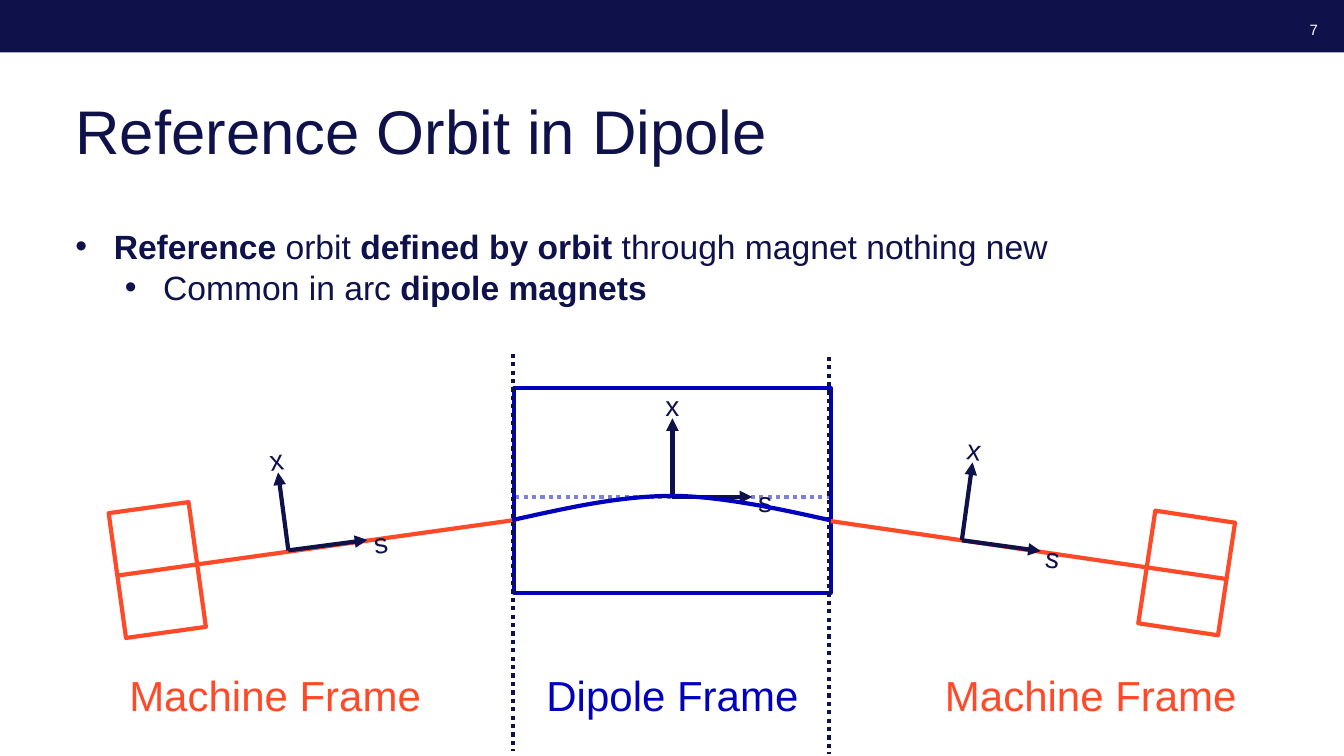
import math
import pptx
import pptx.util
import pptx.dml.color
import pptx.enum.dml
import pptx.enum.shapes
import pptx.enum.text
import pptx.oxml
import pptx.oxml.ns
from lxml import etree

Inches, Pt = pptx.util.Inches, pptx.util.Pt
ALIGN = pptx.enum.text.PP_ALIGN
ANCHOR = pptx.enum.text.MSO_ANCHOR
RECT = pptx.enum.shapes.MSO_SHAPE.RECTANGLE
NAVY, BLUE, RED, WHITE, PALE = "0F124A", "0000BD", "FF4A29", "FFFFFF", "7F7FDD"


def tint(code):
    return pptx.dml.color.RGBColor.from_string(code)


def apply(target, style):
    for key, value in style.items():
        setattr(target, key, value)


def turn(x, y, angle):
    a = math.radians(angle)
    return x * math.cos(a) - y * math.sin(a), x * math.sin(a) + y * math.cos(a)


def child(parent, tag, **attrs):
    return etree.SubElement(parent, pptx.oxml.ns.qn(tag), attrs)


def ink(line, color):
    line.color.rgb = tint(color)
    line.width = Pt(3)


def rule(shapes, start, end, color, dots=False, arrow=False):
    ends = [Inches(v) for v in (*start, *end)]
    line = shapes.add_connector(pptx.enum.shapes.MSO_CONNECTOR.STRAIGHT, *ends)
    ink(line.line, color)
    if dots:
        line.line.dash_style = pptx.enum.dml.MSO_LINE.ROUND_DOT
    if arrow:
        child(line.line._get_or_add_ln(), "a:tailEnd", type="triangle")
    child(line._element.spPr, "a:effectLst")
    return line


def block(shapes, box, fill=None, edge=None, angle=0):
    shape = shapes.add_shape(RECT, *[Inches(v) for v in box])
    shape.shadow.inherit = False
    shape.rotation = angle
    if fill:
        shape.fill.solid()
        shape.fill.fore_color.rgb = tint(fill)
    else:
        shape.fill.background()
    if edge:
        ink(shape.line, edge)
    else:
        shape.line.fill.background()
    return shape


def style(par, size, color, pitch, align):
    apply(par, {"line_spacing": Pt(pitch), "alignment": align})
    for run in par.runs:
        apply(run.font, {"name": "Arial", "size": Pt(size)})
        run.font.color.rgb = tint(color)


def label(shapes, box, text, size, color, pitch=37, align=ALIGN.CENTER,
          anchor=ANCHOR.TOP, angle=0):
    shape = shapes.add_textbox(*[Inches(v) for v in box])
    shape.rotation = angle
    apply(shape.text_frame, {"word_wrap": True, "vertical_anchor": anchor})
    par = shape.text_frame.paragraphs[0]
    par.add_run().text = text
    style(par, size, color, pitch, align)


def banner(slide, x, y, w, h):
    block(slide.shapes, (x, y, w, h), fill=NAVY)
    label(slide.shapes, (x + w - 0.58, y + 0.14, 0.42, 0.25), "7", 10.7, WHITE,
          16.5, ALIGN.RIGHT, ANCHOR.MIDDLE)


def bullets(slide, x, y, w, h):
    items = [
        (0.38, [("Reference", True), (" orbit ", False), ("defined by orbit ", True),
                ("through magnet nothing new", False)]),
        (0.87, [("Common in arc ", False), ("dipole magnets", True)]),
    ]
    frame = slide.shapes.add_textbox(*[Inches(v) for v in (x, y, w, h)]).text_frame
    frame.word_wrap = True
    for i, (left, runs) in enumerate(items):
        par = frame.add_paragraph() if i else frame.paragraphs[0]
        par.level = i
        for text, bold in runs:
            run = par.add_run()
            run.text = text
            run.font.bold = bold
        style(par, 24, NAVY, 29.3, ALIGN.LEFT)
        props = par._p.get_or_add_pPr()
        props.set("marL", str(Inches(left)))
        props.set("indent", str(Inches(-0.38)))
        child(props, "a:buFont", typeface="Arial")
        child(props, "a:buChar", char="•")


def axes(slide, x, y, angle):
    group = slide.shapes.add_group_shape().shapes
    parts = [("s", (0.79, 0), (1.02, -0.08), ALIGN.LEFT),
             ("x", (0, -0.78), (0, -1.04), ALIGN.CENTER)]
    for name, tip, spot, align in parts:
        dx, dy = turn(*tip, angle)
        rule(group, (x, y), (x + dx, y + dy), NAVY, arrow=True)
        dx, dy = turn(*spot, angle)
        box = (x + dx - 0.27, y + dy - 0.27, 0.54, 0.55)
        label(group, box, name, 20, NAVY, align=align, angle=angle)


def beam(slide, x, y, w, h, angle, gate, side):
    quad = block(slide.shapes, (x, y, w, h), edge=RED, angle=angle)
    dx, dy = turn(side * w / 2, 0, angle)
    far = (x + w / 2 + dx, y + h / 2 + dy)
    line = rule(slide.shapes, far, gate, RED)
    line.begin_connect(quad, 3 if side > 0 else 1)
    apply(line, {"begin_x": Inches(far[0]), "begin_y": Inches(far[1])})


def bezier(a, b, c, d, steps=24):
    for i in range(1, steps + 1):
        t = i / steps
        u = 1 - t
        yield tuple(u**3 * p + 3 * u * u * t * q + 3 * u * t * t * r + t**3 * s
                    for p, q, r, s in zip(a, b, c, d))


def orbit(slide, x, y, w, h):
    start, top, end = (x, y + h), (x + 1.59, y), (x + w, y + h)
    points = [*bezier(start, (x + 0.54, y + 0.12), (x + 1.07, y), top),
              *bezier(top, (x + 2.12, y), (x + 2.87, y + 0.18), end)]
    pen = slide.shapes.build_freeform(*[Inches(v) for v in start])
    pen.add_line_segments([(Inches(p), Inches(q)) for p, q in points], close=False)
    curve = pen.convert_to_shape()
    curve.shadow.inherit = False
    curve.fill.background()
    ink(curve.line, BLUE)


def dipole(slide, x, y, w, h):
    rule(slide.shapes, (x + 0.01, y + 1.08), (x + w + 0.02, y + 1.08), PALE, dots=True)
    block(slide.shapes, (x, y, w, h), edge=BLUE)


def borders(slide, x, y, w, h):
    for left, top in ((x, y), (x + w, y + 0.03)):
        rule(slide.shapes, (left, top), (left, top + h), NAVY, dots=True)


def frames(slide, y, w, h):
    for x, name, color in ((1.15, "Machine Frame", RED), (5.09, "Dipole Frame", BLUE),
                           (9.24, "Machine Frame", RED)):
        label(slide.shapes, (x, y, w, h), name, 30, color)


def main():
    deck = pptx.Presentation()
    apply(deck, {"slide_width": Inches(13.33), "slide_height": Inches(7.5)})
    slide = deck.slides.add_slide(deck.slide_layouts[6])
    banner(slide, 0, 0, 13.33, 0.52)
    label(slide.shapes, (0.65, 0.84, 12.05, 1.17), "Reference Orbit in Dipole", 44,
          NAVY, 55, ALIGN.LEFT)
    dipole(slide, 5.1, 3.85, 3.14, 2.03)
    beam(slide, 1.16, 5.03, 0.8, 1.25, -7.9, (5.1, 5.16), -1)
    beam(slide, 11.37, 5.12, 0.8, 1.13, 8.6, (8.24, 5.17), 1)
    for x, y, angle in ((6.67, 4.93, 0), (9.54, 5.36, 7.8), (2.86, 5.46, -7.5)):
        axes(slide, x, y, angle)
    borders(slide, 5.09, 3.51, 3.13, 3.94)
    frames(slide, 6.58, 3.16, 0.59)
    orbit(slide, 5.08, 4.92, 3.15, 0.24)
    bullets(slide, 0.65, 2.18, 12.05, 1.29)
    deck.save("out.pptx")


if __name__ == "__main__":
    main()
